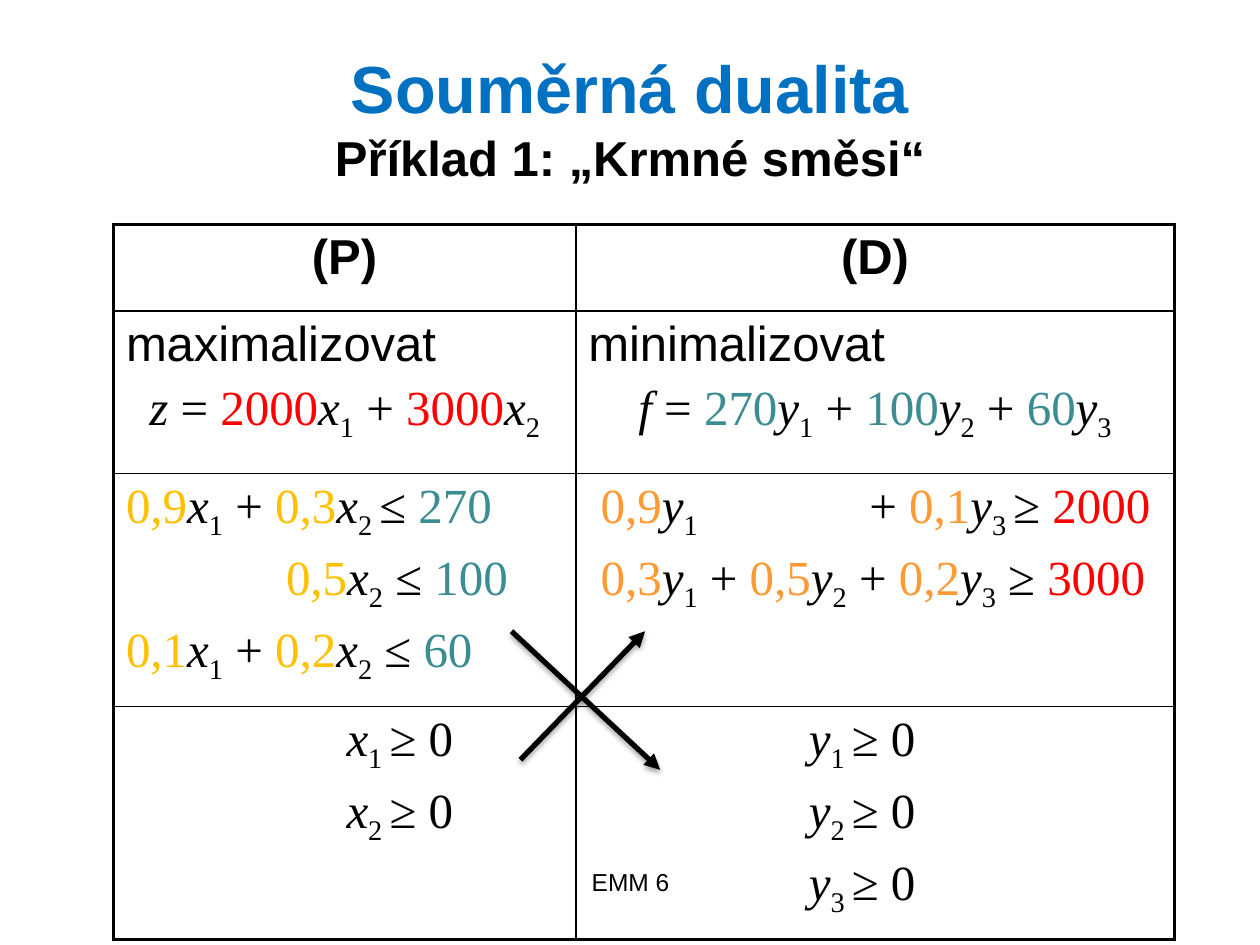
from lxml import etree
from pptx import Presentation, util as u
from pptx.dml.color import RGBColor
from pptx.enum import shapes, text
from pptx.oxml import ns

BLACK = RGBColor(0x00, 0x00, 0x00)
BLUE = RGBColor(0x00, 0x70, 0xC0)
RED = RGBColor(0xFF, 0x00, 0x00)
TEAL = RGBColor(0x3C, 0x8C, 0x93)
GOLD = RGBColor(0xFF, 0xC0, 0x00)
ORANGE = RGBColor(0xFF, 0x99, 0x33)

SANS, SERIF = "Arial", "Times New Roman"
THICK, THIN = u.Pt(2.25), u.Pt(1)
CENTER = text.PP_ALIGN.CENTER


def add_child(parent, tag, **attributes):
    child = etree.SubElement(parent, ns.qn(tag))
    for key, value in attributes.items():
        child.set(key, str(value))
    return child


class DualitySlide:
    def __init__(self, presentation):
        self.slide = presentation.slides.add_slide(presentation.slide_layouts[5])
        self.style = {"name": SANS, "size": u.Pt(28), "bold": False, "italic": False}

    def run(self, paragraph, words, color=BLACK, **changes):
        run = paragraph.add_run()
        run.text = words
        for key, value in {**self.style, **changes}.items():
            setattr(run.font, key, value)
        run.font.color.rgb = color
        return run

    def title(self, heading, subheading, left, top, width, height):
        title = self.slide.shapes.title
        place = {"left": left, "top": top, "width": width, "height": height}
        for key, value in place.items():
            setattr(title, key, u.Inches(value))
        title.text_frame.vertical_anchor = text.MSO_ANCHOR.MIDDLE
        paragraph = title.text_frame.paragraphs[0]
        paragraph.alignment = CENTER
        self.run(paragraph, heading, BLUE, size=u.Pt(38), bold=True)
        paragraph.add_line_break()
        self.run(paragraph, subheading, bold=True)

    def footer(self, words, left, top, width, height):
        box = self.slide.shapes.add_textbox(*map(u.Inches, (left, top, width, height)))
        box.text_frame.word_wrap = True
        paragraph = box.text_frame.paragraphs[0]
        paragraph.alignment = CENTER
        self.run(paragraph, words, size=u.Pt(14))

    def table(self, left, top, widths, heights):
        frame = self.slide.shapes.add_table(
            len(heights), len(widths),
            *map(u.Inches, (left, top, sum(widths), sum(heights))))
        table = frame.table
        table.first_row = table.horz_banding = False
        for column, width in zip(table.columns, widths):
            column.width = u.Inches(width)
        for row, height in zip(table.rows, heights):
            row.height = u.Inches(height)
        last_row, last_column = len(heights) - 1, len(widths) - 1
        for r in range(len(heights)):
            for c in range(len(widths)):
                cell = table.cell(r, c)
                cell.fill.background()
                outer = {"a:lnL": c == 0, "a:lnR": c == last_column,
                         "a:lnT": r == 0, "a:lnB": r == last_row}
                self.borders(cell, outer)
        return table

    def borders(self, cell, outer):
        properties = cell._tc.get_or_add_tcPr()
        for position, (tag, is_outer) in enumerate(outer.items()):
            line = add_child(properties, tag, w=THICK if is_outer else THIN)
            add_child(add_child(line, "a:solidFill"), "a:srgbClr", val=BLACK)
            properties.insert(position, line)

    def paragraph(self, cell, alignment=None, indent=0, tab=None):
        frame = cell.text_frame
        paragraph = frame.paragraphs[0]
        if paragraph.runs:
            paragraph = frame.add_paragraph()
            paragraph.space_before = u.Pt(5.6)
        paragraph.alignment = alignment
        properties = paragraph._p.get_or_add_pPr()
        if indent:
            properties.set("marL", str(u.Inches(indent)))
            properties.set("indent", "0")
        if tab:
            stops = add_child(properties, "a:tabLst")
            add_child(stops, "a:tab", pos=u.Inches(tab), algn="l")
        return paragraph

    def formula(self, cell, expression, coefficient=BLACK, limit=BLACK, **layout):
        paragraph = self.paragraph(cell, **layout)
        color = coefficient
        for token in expression.split("|"):
            if token[0].isalpha():
                self.run(paragraph, token[0], name=SERIF, italic=True)
                if token[1:]:
                    index = self.run(paragraph, token[1:], name=SERIF)
                    index._r.get_or_add_rPr().set("baseline", "-25000")
            elif token[0].isdigit():
                self.run(paragraph, token, color, name=SERIF)
            else:
                self.run(paragraph, token, name=SERIF)
                if "≤" in token or "≥" in token:
                    color = limit

    def arrow(self, start, end):
        arrow = self.slide.shapes.add_connector(
            shapes.MSO_CONNECTOR.STRAIGHT, *map(u.Inches, start + end))
        arrow.line.color.rgb = BLACK
        arrow.line.width = u.Pt(3)
        add_child(arrow.line._get_or_add_ln(), "a:tailEnd", type="triangle")
        effects = add_child(arrow._element.spPr, "a:effectLst")
        shadow = add_child(effects, "a:outerShdw", blurRad=u.Pt(3.1), dist=u.Pt(1.8),
                           dir=90 * 60000, rotWithShape=0)
        add_child(add_child(shadow, "a:srgbClr", val=BLACK), "a:alpha", val=35000)


def main():
    presentation = Presentation()
    presentation.slide_width, presentation.slide_height = u.Inches(10), u.Inches(7.5)
    page = DualitySlide(presentation)
    page.footer("EMM 6", 3.42, 6.83, 3.17, 0.52)
    page.title("Souměrná dualita", "Příklad 1: „Krmné směsi“", 0.5, 0.3, 9, 1.25)

    table = page.table(0.9, 1.78, (3.67, 4.75), (0.69, 1.29, 1.76, 1.76))
    problems = (
        ("(P)", "maximalizovat", "z| = |2000|x1| + |3000|x2", RED),
        ("(D)", "minimalizovat", "f| = |270|y1| + |100|y2| + |60|y3", TEAL),
    )
    for column, (label, goal, objective, color) in enumerate(problems):
        heading, target = table.cell(0, column), table.cell(1, column)
        page.run(page.paragraph(heading, CENTER), label, bold=True)
        page.run(page.paragraph(target), goal)
        page.formula(target, objective, color, alignment=CENTER)

    primal, dual = table.cell(2, 0), table.cell(2, 1)
    page.formula(primal, "0,9|x1| + |0,3|x2 |≤ |270", GOLD, TEAL)
    page.formula(primal, "0,5|x2| ≤ |100", GOLD, TEAL, indent=1.27)
    page.formula(primal, "0,1|x1| + |0,2|x2| ≤ |60", GOLD, TEAL)
    page.formula(dual, " |0,9|y1|\t+ |0,1|y3 |≥ |2000", ORANGE, RED, tab=2.23)
    page.formula(dual, " |0,3|y1| + |0,5|y2| + |0,2|y3| ≥ |3000", ORANGE, RED)

    for column, (variable, count) in enumerate((("x", 2), ("y", 3))):
        for index in range(1, count + 1):
            page.formula(table.cell(3, column), f"{variable}{index} |≥ 0", indent=1.75)

    page.arrow((4.06, 5.01), (5.24, 6.11))
    page.arrow((4.13, 6.03), (5.12, 5.01))
    presentation.save("out.pptx")


if __name__ == "__main__":
    main()
